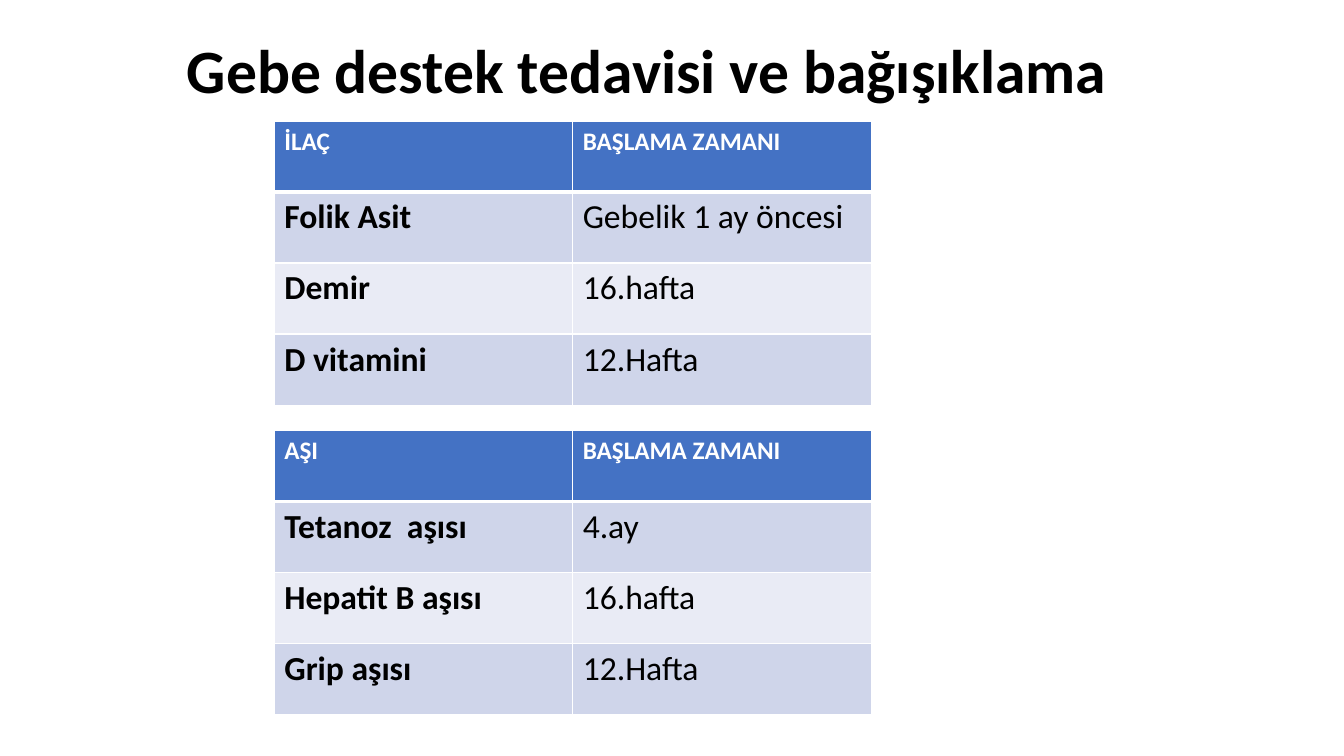
from lxml.etree import SubElement
from pptx import Presentation
from pptx.dml.color import RGBColor
from pptx.enum.text import MSO_ANCHOR as Anchor, PP_ALIGN as Align
from pptx.oxml.ns import qn
from pptx.util import Inches, Pt

BLACK, WHITE = "000000", "FFFFFF"
HEADER_FILL = "4472C4"
BAND_FILLS = ("CFD5EA", "E9EBF5")
START_TIME = "BAŞLAMA ZAMANI"
MEDICINES = [
    ("İLAÇ", START_TIME),
    ("Folik Asit", "Gebelik 1 ay öncesi"),
    ("Demir", "16.hafta"),
    ("D vitamini", "12.Hafta"),
]
VACCINES = [
    ("AŞI", START_TIME),
    ("Tetanoz  aşısı", "4.ay"),
    ("Hepatit B aşısı", "16.hafta"),
    ("Grip aşısı", "12.Hafta"),
]


def color(value):
    return RGBColor.from_string(value)


def write_text(frame, text, size=24, bold=False, fill=BLACK, align=None, spacing=None):
    paragraph = frame.paragraphs[0]
    paragraph.alignment = align
    paragraph.line_spacing = spacing
    run = paragraph.add_run()
    run.text = text
    run.font.name = "Calibri"
    run.font.size = Pt(size)
    run.font.bold = bold
    run.font.color.rgb = color(fill)


def add_title(slide, text):
    shape = slide.shapes.add_textbox(Inches(0.74), 0, Inches(11.5), Inches(1.45))
    frame = shape.text_frame
    frame.word_wrap = True
    frame.vertical_anchor = Anchor.MIDDLE
    write_text(frame, text, size=44, bold=True, align=Align.CENTER, spacing=0.9)


def set_borders(cell, **widths):
    properties = cell._tc.get_or_add_tcPr()
    for side in ("L", "R", "T", "B"):
        width = Pt(widths.get(side, 1))
        line = SubElement(properties, qn(f"a:ln{side}"), w=str(width))
        fill = SubElement(line, qn("a:solidFill"))
        SubElement(fill, qn("a:srgbClr"), val=WHITE)


def fill_cell(cell, text, row, column):
    header = row == 0
    if header:
        set_borders(cell, B=3)
    else:
        set_borders(cell, T=3 if row == 1 else 1)
    cell.fill.solid()
    cell.fill.fore_color.rgb = color(HEADER_FILL if header else BAND_FILLS[(row - 1) % 2])
    write_text(
        cell.text_frame,
        text,
        size=18 if header else 24,
        bold=header or column == 0,
        fill=WHITE if header else BLACK,
    )


def add_schedule(slide, top, rows):
    table = slide.shapes.add_table(
        len(rows), 2, Inches(2.72), Inches(top), Inches(5.92), Inches(2.82)
    ).table
    for row, texts in enumerate(rows):
        for column, text in enumerate(texts):
            fill_cell(table.cell(row, column), text, row, column)


def main():
    presentation = Presentation()
    presentation.slide_width = Inches(13.33)
    presentation.slide_height = Inches(7.5)
    slide = presentation.slides.add_slide(presentation.slide_layouts[6])
    add_title(slide, "Gebe destek tedavisi ve bağışıklama ")
    add_schedule(slide, 1.2, MEDICINES)
    add_schedule(slide, 4.27, VACCINES)
    presentation.save("out.pptx")


if __name__ == "__main__":
    main()
